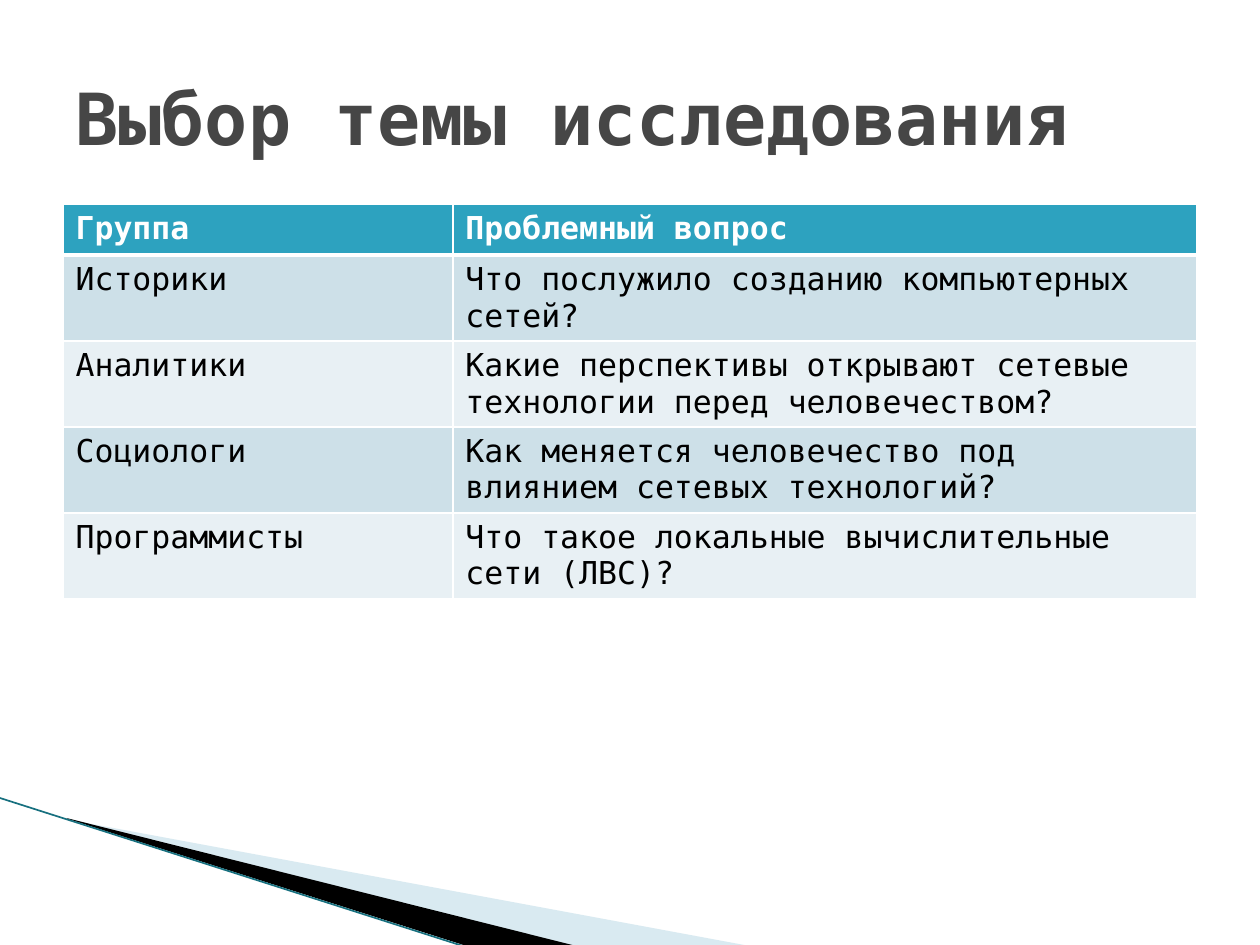
"""Build a slide with a title and a table of research groups and their questions."""
from lxml.etree import SubElement
from pptx import Presentation
from pptx.dml.color import RGBColor
from pptx.enum.shapes import MSO_CONNECTOR as CONNECTOR
from pptx.enum.text import MSO_ANCHOR as ANCHOR
from pptx.oxml.ns import qn
from pptx.util import Pt

FONT = "DejaVu Sans Mono"
COLORS = {
    "title": "464646", "header": "2DA2BF", "odd": "CDE0E8", "even": "E8F0F4",
    "white": "FFFFFF", "black": "000000", "wedge": "A0CBDC", "edge": "17707F",
}
ROWS = [
    ("Группа", "Проблемный вопрос"),
    ("Историки", "Что послужило созданию компьютерных сетей?"),
    ("Аналитики", "Какие перспективы открывают сетевые технологии перед человечеством?"),
    ("Социологи", "Как меняется человечество под влиянием сетевых технологий?"),
    ("Программисты", "Что такое локальные вычислительные сети (ЛВС)?"),
]
COL_WIDTHS = (222.75, 425.25)
HEADER_HEIGHT, ROW_HEIGHT = 29.2, 49.1


def rgb(name):
    return RGBColor.from_string(COLORS[name])


def style_text(p, size, color, bold):
    p.font.name, p.font.size, p.font.bold = FONT, Pt(size), bold
    p.font.color.rgb = rgb(color)


def set_frame(sp, left, top, width, height):
    """Give a freeform a new frame while its outline stays in place."""
    dx, dy = sp.left - Pt(left), sp.top - Pt(top)
    outline = sp._element.spPr.find(".//" + qn("a:path"))
    outline.set("w", str(Pt(width)))
    outline.set("h", str(Pt(height)))
    for pt in outline.iter(qn("a:pt")):
        pt.set("x", str(int(pt.get("x")) + dx))
        pt.set("y", str(int(pt.get("y")) + dy))
    sp.left, sp.top, sp.width, sp.height = map(Pt, (left, top, width, height))


def add_wedge(slide, points, frame, color, alpha=100):
    points = [(Pt(x), Pt(y)) for x, y in points]
    builder = slide.shapes.build_freeform(*points[0])
    builder.add_line_segments(points[1:], close=True)
    sp = builder.convert_to_shape()
    set_frame(sp, *frame)
    sp.shadow.inherit = False
    sp.fill.solid()
    sp.fill.fore_color.rgb = rgb(color)
    sp.line.fill.background()
    if alpha < 100:
        clr = sp.fill._xPr.find(".//" + qn("a:srgbClr"))
        SubElement(clr, qn("a:alpha"), val=str(alpha * 1000))


def add_line(slide, start, end, color, width):
    line = slide.shapes.add_connector(CONNECTOR.STRAIGHT, *map(Pt, start + end))
    line.line.color.rgb = rgb(color)
    line.line.width = Pt(width)
    SubElement(line._element.spPr, qn("a:effectLst"))


def add_title(slide, text):
    tf = slide.shapes.add_textbox(Pt(36), Pt(21.6), Pt(648), Pt(90)).text_frame
    tf.word_wrap = True
    tf.vertical_anchor = ANCHOR.MIDDLE
    tf.text = text
    style_text(tf.paragraphs[0], 41, "title", True)


def set_borders(cell, top, bottom):
    tc_pr = cell._tc.get_or_add_tcPr()
    for side, width in (("L", 1), ("R", 1), ("T", top), ("B", bottom)):
        ln = SubElement(tc_pr, qn(f"a:ln{side}"), w=str(Pt(width)))
        fill = SubElement(ln, qn("a:solidFill"))
        SubElement(fill, qn("a:srgbClr"), val=COLORS["white"])


def add_table(slide, rows):
    height = HEADER_HEIGHT + ROW_HEIGHT * (len(rows) - 1)
    table = slide.shapes.add_table(len(rows), len(COL_WIDTHS), Pt(36), Pt(116.6),
                                   Pt(sum(COL_WIDTHS)), Pt(height)).table
    for column, width in zip(table.columns, COL_WIDTHS):
        column.width = Pt(width)
    for i, texts in enumerate(rows):
        header = i == 0
        table.rows[i].height = Pt(HEADER_HEIGHT if header else ROW_HEIGHT)
        fill = "header" if header else ("odd" if i % 2 else "even")
        for j, text in enumerate(texts):
            cell = table.cell(i, j)
            set_borders(cell, top=3 if i == 1 else 1, bottom=3 if header else 1)
            cell.fill.solid()
            cell.fill.fore_color.rgb = rgb(fill)
            cell.text = text
            style_text(cell.text_frame.paragraphs[0], 18,
                       "white" if header else "black", header)


def main():
    prs = Presentation()
    prs.slide_width, prs.slide_height = Pt(720), Pt(540)
    slide = prs.slides.add_slide(prs.slide_layouts[6])
    add_wedge(slide, [(39.6, 468.5), (428, 540.5), (328, 540.5), (39.6, 468)],
              (56.2, 393.8, 299.5, 113.8), "wedge", 40)
    add_wedge(slide, [(38.2, 467.5), (329, 540.5), (268, 541), (38.9, 468)],
              (-4.3, 455.8, 299.5, 66.2), "black")
    add_line(slide, (-0.7, 455.8), (267.1, 541.4), "edge", 0.95)
    add_table(slide, ROWS)
    add_title(slide, "Выбор темы исследования")
    prs.save("out.pptx")


if __name__ == "__main__":
    main()
